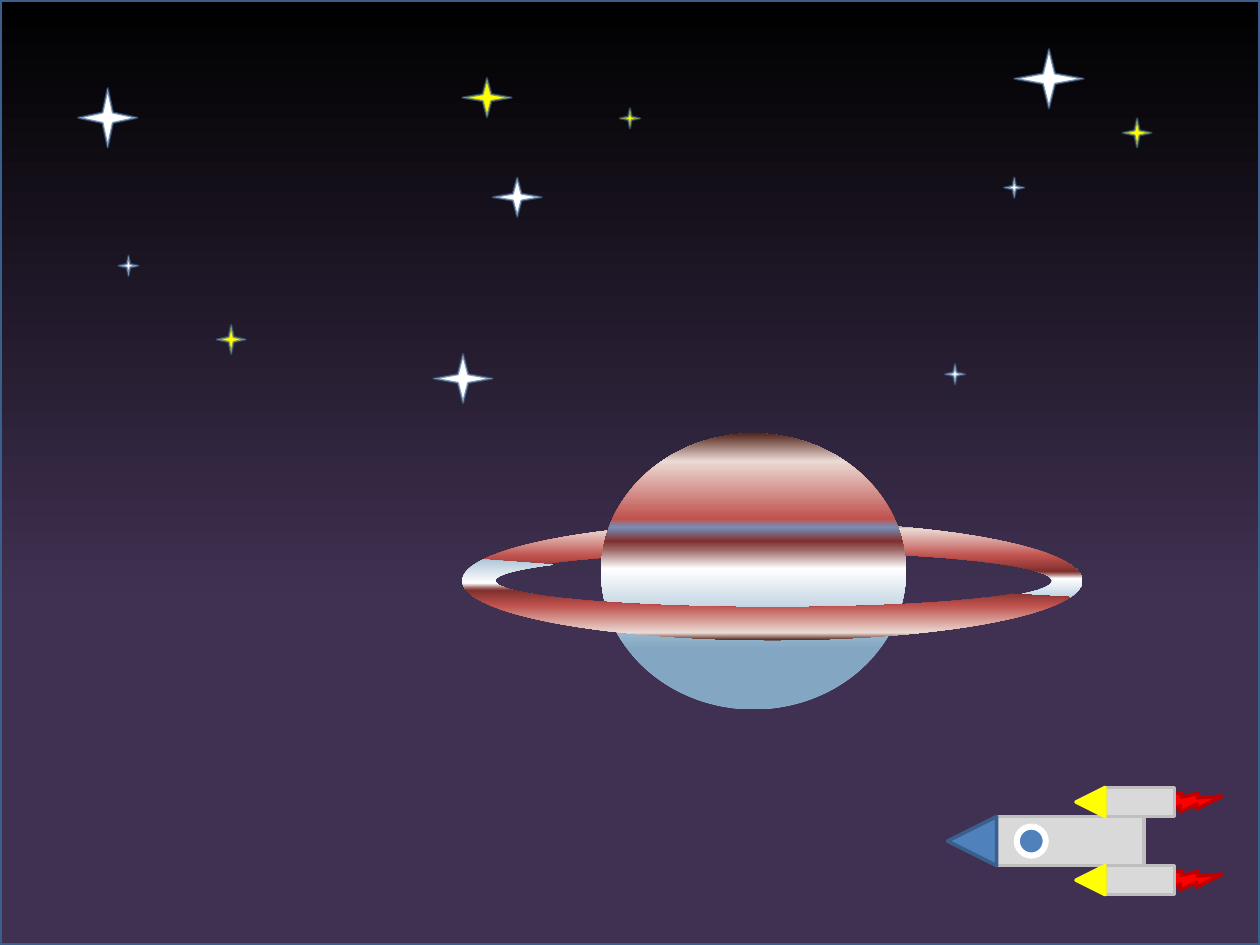
from dataclasses import dataclass

from lxml.etree import SubElement
from pptx import Presentation
from pptx.dml.color import RGBColor
from pptx.enum.shapes import MSO_SHAPE
from pptx.oxml.ns import qn
from pptx.util import Inches, Pt


@dataclass(frozen=True)
class Theme:
    """Colours, gradients and line widths of the space scene."""
    white: str = "FFFFFF"
    yellow: str = "FFFF00"
    blue: str = "4F81BD"
    outline: str = "3A5F8C"
    hull: str = "D9D9D9"
    hull_edge: str = "BFBFBF"
    flame: str = "FF0000"
    flame_edge: str = "C00000"
    thin: float = 1.25
    medium: float = 2
    thick: float = 3.5
    star_line_opacity: int = 62
    sky: tuple = ((0, "403152"), (36, "403152"), (100, "000000"))
    ring: tuple = ((0, "DCEBF5"), (8, "83A7C3"), (13, "768FB9"), (21, "83A7C3"),
                   (52, "FFFFFF"), (56, "9C6563"), (58, "80302D"), (71, "C0524E"),
                   (94, "EBDAD4"), (100, "55261C"))
    planet: tuple = ((0, "DCEBF5"), (0, "83A7C3"), (22, "83A7C3"), (51, "FFFFFF"),
                     (58, "9C6563"), (61, "80302D"), (66, "768FB9"), (69, "C0524E"),
                     (90, "EBDAD4"), (100, "55261C"))


THEME = Theme()


def fill_gradient(shape, stops):
    """Fill a shape with gradient stops running from bottom to top."""
    shape.fill.gradient()
    shape.fill.gradient_angle = 90
    stop_list = shape.element.spPr.find(qn("a:gradFill")).find(qn("a:gsLst"))
    for stop in list(stop_list):
        stop_list.remove(stop)
    for position, color in stops:
        stop = SubElement(stop_list, qn("a:gs"), pos=str(position * 1000))
        SubElement(stop, qn("a:srgbClr"), val=color)


def add_figure(shapes, kind, box, fill, line=None, width=THEME.medium, rotation=0):
    """Add a preset shape with a solid or gradient fill and an optional outline."""
    shape = shapes.add_shape(kind, *(Inches(length) for length in box))
    shape.shadow.inherit = False
    shape.rotation = rotation
    if isinstance(fill, str):
        shape.fill.solid()
        shape.fill.fore_color.rgb = RGBColor.from_string(fill)
    else:
        fill_gradient(shape, fill)
    if line:
        shape.line.color.rgb = RGBColor.from_string(line)
        shape.line.width = Pt(width)
    else:
        shape.line.fill.background()
    return shape


def add_stars(shapes, left, top):
    """Scatter a group of four-pointed stars from the given corner."""
    stars = (
        (0, 0.31, 0.47, 0.47, THEME.white),
        (2.82, 2.42, 0.47, 0.39, THEME.white),
        (1.1, 2.19, 0.23, 0.23, THEME.yellow),
        (0.32, 1.64, 0.16, 0.16, THEME.white),
        (3.29, 1.02, 0.39, 0.31, THEME.white),
        (7.43, 0, 0.55, 0.47, THEME.white),
        (7.35, 1.02, 0.16, 0.16, THEME.white),
        (6.88, 2.5, 0.16, 0.16, THEME.white),
        (3.05, 0.23, 0.39, 0.31, THEME.yellow),
        (4.3, 0.47, 0.16, 0.16, THEME.yellow),
        (8.29, 0.55, 0.23, 0.23, THEME.yellow),
    )
    group = shapes.add_group_shape()
    for x, y, width, height, color in stars:
        star = add_figure(group.shapes, MSO_SHAPE.STAR_4_POINT,
                          (left + x, top + y, width, height), color,
                          THEME.outline, THEME.thin)
        for color_element in star.element.spPr.find(qn("a:ln")).iter(qn("a:srgbClr")):
            SubElement(color_element, qn("a:alpha"),
                       val=str(THEME.star_line_opacity * 1000))


def add_ring(shapes, box, adjustments, flipped=False):
    """Add one half of the planet's ring."""
    ring = add_figure(shapes, MSO_SHAPE.BLOCK_ARC, box, THEME.ring)
    for index, value in enumerate(adjustments):
        ring.adjustments[index] = value
    if flipped:
        ring.element.spPr.get_or_add_xfrm().set("flipV", "1")


def add_planet(shapes, left, top):
    """Add the planet between the back and front halves of its ring."""
    ring_box = (left, top + 0.7, 4.92, 0.94)
    add_ring(shapes, ring_box, (107.119, 2.581, 0.254))
    add_figure(shapes, MSO_SHAPE.OVAL, (left + 1.1, top, 2.42, 2.19), THEME.planet)
    add_ring(shapes, ring_box, (105.475, 214.119, 0.277), flipped=True)


def add_rocket(shapes, left, top):
    """Add a left-facing rocket with two boosters as one group."""
    group = shapes.add_group_shape()
    booster_offsets = (0.62, 0)

    def add_part(kind, x, y, width, height, *style, rotation=270):
        """Add a rocket part relative to the rocket's corner."""
        add_figure(group.shapes, kind, (left + x, top + y, width, height),
                   *style, rotation=rotation)

    for offset in booster_offsets:
        add_part(MSO_SHAPE.LIGHTNING_BOLT, 1.73, 0.08 + offset, 0.37, 0.4,
                 THEME.flame, THEME.flame_edge, rotation=301.8)
    add_part(MSO_SHAPE.RECTANGLE, 0.78, 0, 0.39, 1.17, THEME.hull, THEME.hull_edge)
    for offset in booster_offsets:
        add_part(MSO_SHAPE.RECTANGLE, 1.41, offset, 0.23, 0.55,
                 THEME.hull, THEME.hull_edge)
    for offset in booster_offsets:
        add_part(MSO_SHAPE.ISOSCELES_TRIANGLE, 1.02, 0.16 + offset, 0.23, 0.23,
                 THEME.yellow, THEME.yellow)
    add_part(MSO_SHAPE.OVAL, 0.55, 0.47, 0.23, 0.23,
             THEME.blue, THEME.white, THEME.thick)
    add_part(MSO_SHAPE.ISOSCELES_TRIANGLE, 0, 0.39, 0.39, 0.39,
             THEME.blue, THEME.outline)


def main():
    """Build the space scene and save it."""
    presentation = Presentation()
    presentation.slide_width = Inches(10)
    presentation.slide_height = Inches(7.5)
    slide = presentation.slides.add_slide(presentation.slide_layouts[6])
    add_figure(slide.shapes, MSO_SHAPE.RECTANGLE, (0, 0, 10, 7.5),
               THEME.sky, THEME.outline)
    add_stars(slide.shapes, 0.62, 0.39)
    add_planet(slide.shapes, 3.67, 3.44)
    add_rocket(slide.shapes, 7.52, 6.09)
    presentation.save("out.pptx")


if __name__ == "__main__":
    main()
